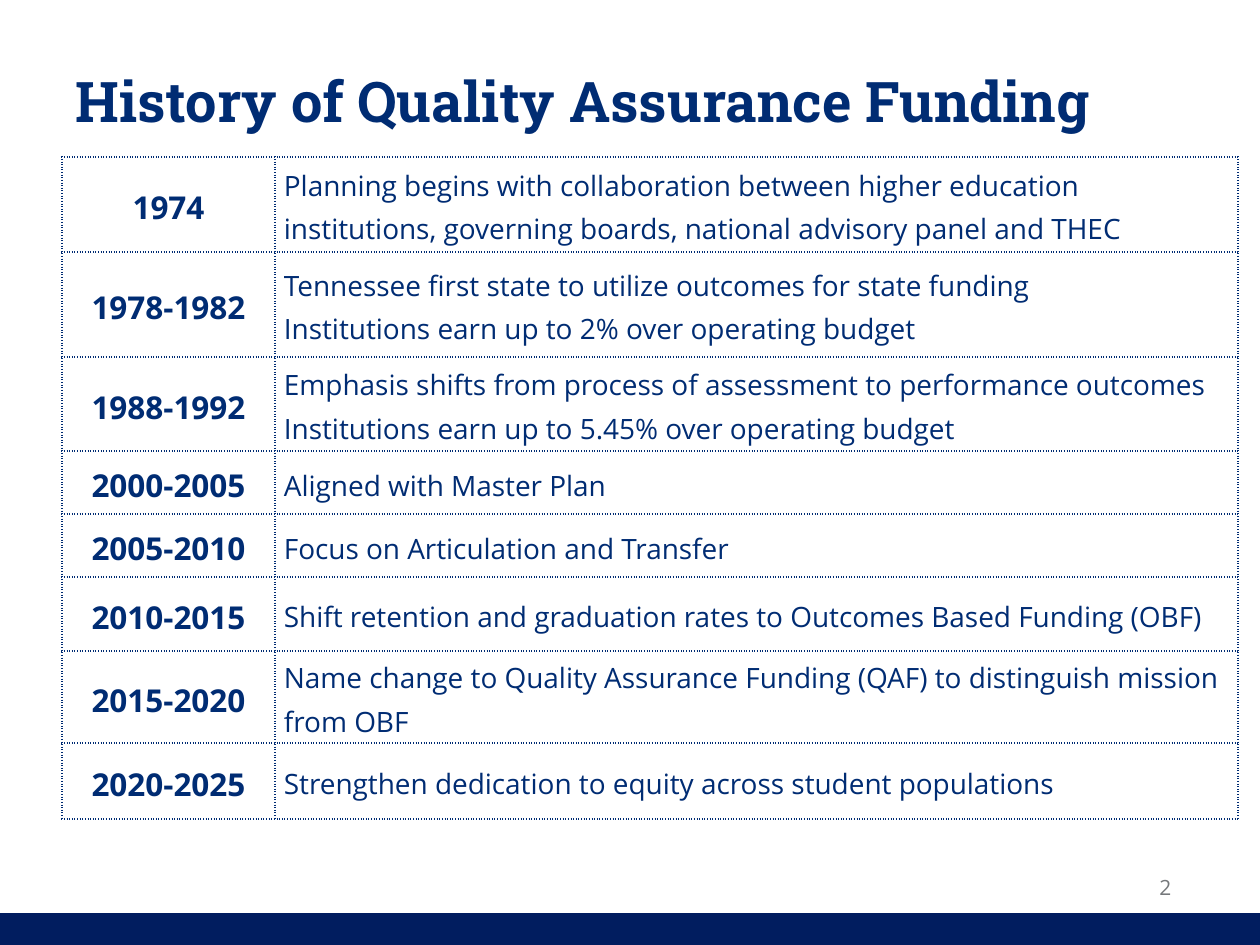
from lxml.etree import fromstring
from pptx import Presentation
from pptx.dml.color import RGBColor
from pptx.enum.shapes import MSO_SHAPE as Shape
from pptx.enum.text import MSO_ANCHOR as Anchor, PP_ALIGN as Align
from pptx.util import Pt

SCALE = 914400 / 126  # EMU per px
NAVY = RGBColor(0x00, 0x2C, 0x73)
DARK = RGBColor(0x01, 0x1D, 0x5F)
GREY = RGBColor(0x75, 0x78, 0x7B)
HEAD, BODY = "Roboto Slab", "Open Sans"
NS = "http://schemas.openxmlformats.org/drawingml/2006/main"

COLS = [213, 963]
# Row height, years, lines of text
ROWS = [
    (95, "1974", ["Planning begins with collaboration between higher education "
                  "institutions, governing boards, national advisory panel and THEC"]),
    (105, "1978-1982", ["Tennessee first state to utilize outcomes for state funding",
                        "Institutions earn up to 2% over operating budget"]),
    (94, "1988-1992", ["Emphasis shifts from process of assessment to performance outcomes",
                       "Institutions earn up to 5.45% over operating budget"]),
    (63, "2000-2005", ["Aligned with Master Plan"]),
    (63, "2005-2010", ["Focus on Articulation and Transfer"]),
    (74, "2010-2015", ["Shift retention and graduation rates to Outcomes Based Funding (OBF)"]),
    (92, "2015-2020", ["Name change to Quality Assurance Funding (QAF) to distinguish mission",
                       "from OBF"]),
    (76, "2020-2025", ["Strengthen dedication to equity across student populations"]),
]


def px(n):
    return round(n * SCALE)


def place(box):
    return [px(n) for n in box]


def write(frame, lines, size, font=BODY, color=NAVY, bold=False,
          align=Align.LEFT, space=None):
    frame.word_wrap = True
    for i, line in enumerate(lines):
        para = frame.paragraphs[0] if i == 0 else frame.add_paragraph()
        para.alignment = align
        para.line_spacing = space
        run = para.add_run()
        run.text = line
        run.font.name, run.font.size = font, Pt(size)
        run.font.bold, run.font.color.rgb = bold, color


def add_title(slide, box, text):
    title = slide.shapes.title
    title.left, title.top, title.width, title.height = place(box)
    title.text_frame.vertical_anchor = Anchor.MIDDLE
    write(title.text_frame, [text], 32, font=HEAD, bold=True)


def add_edges(cell):
    props = cell._tc.get_or_add_tcPr()
    for i, side in enumerate("LRTB"):
        props.insert(i, fromstring(
            f'<a:ln{side} xmlns:a="{NS}" w="12700"><a:solidFill>'
            f'<a:srgbClr val="{NAVY}"/></a:solidFill>'
            f'<a:prstDash val="sysDot"/></a:ln{side}>'))


def fill_cell(cell, lines, size, **fmt):
    cell.fill.background()
    cell.vertical_anchor = Anchor.MIDDLE
    cell.margin_left = cell.margin_right = px(9)
    cell.margin_top = cell.margin_bottom = 0
    write(cell.text_frame, lines, size, space=1.15, **fmt)
    add_edges(cell)


def add_history(slide, left, top):
    box = left, top, sum(COLS), sum(row[0] for row in ROWS)
    table = slide.shapes.add_table(len(ROWS), len(COLS), *place(box)).table
    table.first_row = table.horz_banding = False
    for col, width in zip(table.columns, COLS):
        col.width = px(width)
    for i, (height, years, lines) in enumerate(ROWS):
        table.rows[i].height = px(height)
        fill_cell(table.cell(i, 0), [years], 18, bold=True, align=Align.CENTER)
        fill_cell(table.cell(i, 1), lines, 16)


def add_footer(slide, left, top, width, height, number):
    # Bar along the bottom edge
    bar_h = 32
    bar = slide.shapes.add_shape(
        Shape.RECTANGLE, *place((left, top + height - bar_h, width, bar_h)))
    bar.shadow.inherit = False
    bar.fill.solid()
    bar.fill.fore_color.rgb = DARK
    bar.line.fill.background()
    # Page number
    page = slide.shapes.add_textbox(
        *place((left + width - 126, top, 63, 53))).text_frame
    page.vertical_anchor = Anchor.MIDDLE
    write(page, [number], 12, color=GREY, align=Align.CENTER)


def main():
    deck = Presentation()
    deck.slide_width, deck.slide_height = px(1260), px(945)
    slide = deck.slides.add_slide(deck.slide_layouts[5])
    add_footer(slide, 0, 861, 1260, 84, "2")
    add_title(slide, (63, 22, 1134, 157), "History of Quality Assurance Funding")
    add_history(slide, 62, 157)
    deck.save("out.pptx")


if __name__ == "__main__":
    main()
